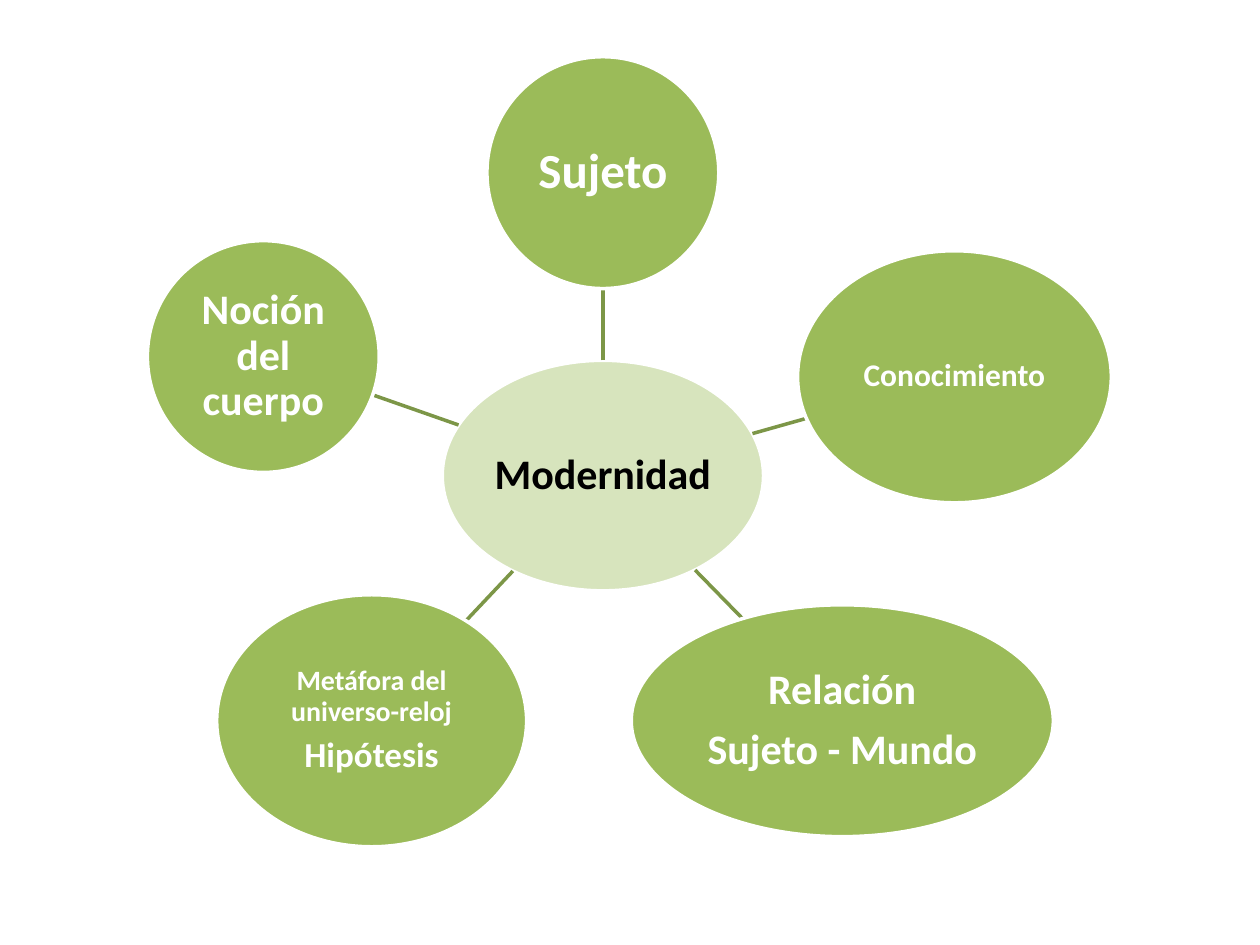
import math
import lxml.etree
import pptx
import pptx.dml.color
import pptx.enum.shapes
import pptx.enum.text
import pptx.oxml.ns
import pptx.util

RGB = pptx.dml.color.RGBColor
PALE = RGB(0xD7, 0xE4, 0xBD)
GREEN = RGB(0x9B, 0xBB, 0x59)
OLIVE = RGB(0x7C, 0x96, 0x47)
WHITE = RGB(0xFF, 0xFF, 0xFF)
BLACK = RGB(0x00, 0x00, 0x00)

WIDE, HIGH = 10, 7.5

# Centre and size are percentages of the slide's width and height.
HUB = ((47.85, 50.33), (25.5, 24.4), [("Modernidad", 24)])
NODES = [
    ((47.85, 18.27), (18.4, 24.53), [("Sujeto", 28)]),
    ((75.75, 39.87), (24.9, 26.67), [("Conocimiento", 18)]),
    ((66.85, 76.27), (33.5, 24.53), [("Relación", 24), ("Sujeto - Mundo", 24)]),
    ((29.5, 76.27), (24.6, 26.67),
     [("Metáfora del universo-reloj", 16), ("Hipótesis", 20)]),
    ((20.9, 37.73), (18.4, 24.53), [("Noción del cuerpo", 24)]),
]


def scale(pair):
    return pair[0] * WIDE / 100, pair[1] * HIGH / 100


def put(item, values):
    for key, value in values.items():
        setattr(item, key, value)


def edge(node, goal):
    (x, y), (w, h) = scale(node[0]), scale(node[1])
    gx, gy = scale(goal[0])
    dx, dy = gx - x, gy - y
    part = 1 / math.hypot(2 * dx / w, 2 * dy / h)
    return x + part * dx, y + part * dy


def draw_oval(slide, node, fill, ink):
    (x, y), (w, h) = scale(node[0]), scale(node[1])
    oval = slide.shapes.add_shape(
        pptx.enum.shapes.MSO_SHAPE.OVAL,
        *map(pptx.util.Inches, (x - w / 2, y - h / 2, w, h)))
    oval.shadow.inherit = False
    oval.fill.solid()
    oval.fill.fore_color.rgb = fill
    oval.line.color.rgb = WHITE
    oval.line.width = pptx.util.Pt(2)
    frame = oval.text_frame
    gap = pptx.util.Inches(0.02)
    put(frame, {"word_wrap": True,
                "vertical_anchor": pptx.enum.text.MSO_ANCHOR.MIDDLE,
                "margin_left": gap, "margin_right": gap,
                "margin_top": gap, "margin_bottom": gap})
    for row, (text, size) in enumerate(node[2]):
        para = frame.add_paragraph() if row else frame.paragraphs[0]
        put(para, {"alignment": pptx.enum.text.PP_ALIGN.CENTER,
                   "line_spacing": 0.9,
                   "space_after": pptx.util.Pt(0.35 * size)})
        run = para.add_run()
        run.text = text
        put(run.font, {"name": "Calibri", "size": pptx.util.Pt(size), "bold": True})
        run.font.color.rgb = ink


def draw_spoke(slide, node):
    ends = edge(HUB, node) + edge(node, HUB)
    spoke = slide.shapes.add_connector(
        pptx.enum.shapes.MSO_CONNECTOR.STRAIGHT, *map(pptx.util.Inches, ends))
    spoke.line.color.rgb = OLIVE
    spoke.line.width = pptx.util.Pt(2)
    lxml.etree.SubElement(
        spoke._element.spPr, pptx.oxml.ns.qn("a:effectLst"))


def main():
    deck = pptx.Presentation()
    put(deck, {"slide_width": pptx.util.Inches(WIDE),
               "slide_height": pptx.util.Inches(HIGH)})
    slide = deck.slides.add_slide(deck.slide_layouts[6])
    draw_oval(slide, HUB, PALE, BLACK)
    for node in NODES:
        draw_spoke(slide, node)
        draw_oval(slide, node, GREEN, WHITE)
    deck.save("out.pptx")


if __name__ == "__main__":
    main()
